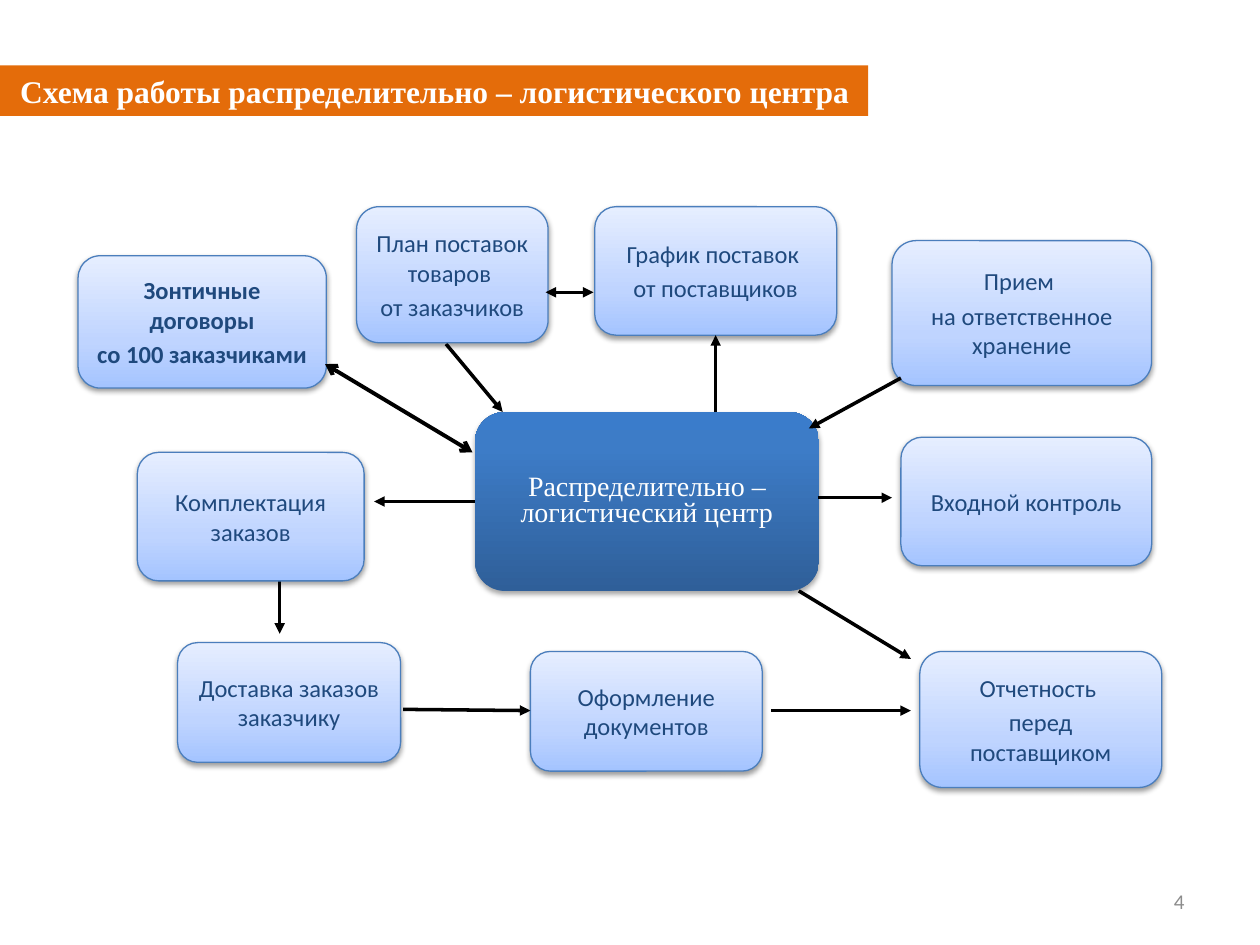
from lxml import etree
from pptx import Presentation, util as u
from pptx.dml.color import RGBColor
from pptx.enum import shapes, text
from pptx.oxml import ns

COLORS = {"title": "E46C0A", "white": "FFFFFF", "ink": "1F497D", "edge": "4B7EBC",
          "arrow": "000000", "number": "8C8C8C"}
PALE = [(0, "A4C4FF"), (35, "BFD4FF"), (100, "E6EEFF")]
DEEP = [(0, "2F5F99"), (80, "3D7CC7"), (100, "3A7CCB")]

deck = Presentation()
deck.slide_width, deck.slide_height = u.Inches(10), u.Inches(7.5)
page = deck.slides.add_slide(deck.slide_layouts[6])
COLUMN, ROW = deck.slide_width / 100, deck.slide_height / 75


def place(left, top, width, height):
    return [round(n * unit) for n, unit in zip((left, top, width, height), (COLUMN, ROW) * 2)]


def write(box, lines, size, color, font="Calibri", bold=False, align=text.PP_ALIGN.CENTER,
          before=0, spacing=1):
    frame = box.text_frame
    frame.word_wrap = True
    frame.vertical_anchor = text.MSO_ANCHOR.MIDDLE
    for i, line in enumerate(lines):
        para = frame.paragraphs[0] if i == 0 else frame.add_paragraph()
        para.alignment, para.line_spacing = align, spacing
        para.space_before = u.Pt(before)
        span = para.add_run()
        span.text = line
        span.font.name, span.font.size, span.font.bold = font, u.Pt(size), bold
        span.font.color.rgb = RGBColor.from_string(COLORS[color])


CENTER = ["Распределительно – логистический центр"]
UMBRELLA = ["Зонтичные договоры", "со 100 заказчиками"]
steps = [
    ("arrow", (22.2, 44.9), (22.2, 50.3), "end"),
    ("arrow", (35.4, 27.3), (39.9, 32.7), "end"),
    ("box", (37.7, 32.7, 27.3, 14.2), CENTER),
    ("box", (28.3, 16.4, 15.2, 10.8), ["План поставок товаров ", "от заказчиков"]),
    ("box", (47.2, 16.4, 19.2, 10.2), ["График поставок ", "от поставщиков"]),
    ("box", (70.8, 19.1, 20.6, 11.5), ["Прием ", "на ответственное хранение"]),
    ("box", (71.5, 34.7, 19.9, 10.2), ["Входной контроль"]),
    ("box", (10.9, 35.9, 18, 10.2), ["Комплектация заказов"]),
    ("box", (14.1, 51, 17.7, 9.5), ["Доставка заказов заказчику"]),
    ("box", (42.1, 51.7, 18.4, 9.5), ["Оформление документов"]),
    ("box", (73, 51.7, 19.2, 10.8), ["Отчетность ", "перед поставщиком"]),
    ("arrow", (56.8, 32.7), (56.8, 26.6), "end"),
    ("arrow", (71.5, 30), (64.2, 34), "end"),
    ("arrow", (64.9, 39.5), (70.8, 39.5), "end"),
    ("arrow", (37.7, 39.8), (29.7, 39.8), "end"),
    ("arrow", (63.4, 46.9), (72.3, 52.3), "end"),
    ("arrow", (61.2, 56.4), (72.3, 56.4), "end"),
    ("arrow", (47.1, 23.2), (43.3, 23.2), "both"),
    ("box", (6.2, 20.3, 19.7, 10.5), UMBRELLA),
    ("arrow", (25.8, 28.9), (37.5, 35.9), "open"),
    ("arrow", (32, 56.3), (42.1, 56.4), "end"),
]

for kind, first, second, *ends in steps:
    if kind == "arrow":
        arrow = page.shapes.add_connector(shapes.MSO_CONNECTOR.STRAIGHT,
                                          *place(*first, *second))
        arrow.line.color.rgb = RGBColor.from_string(COLORS["arrow"])
        arrow.line.width = u.Pt(2.25 if ends == ["open"] else 2)
        head = "arrow" if ends == ["open"] else "triangle"
        for tag in ["a:tailEnd"] if ends == ["end"] else ["a:headEnd", "a:tailEnd"]:
            etree.SubElement(arrow.line._get_or_add_ln(), ns.qn(tag), type=head)
        etree.SubElement(arrow._element.spPr, ns.qn("a:effectLst"))
        continue

    central = second == CENTER
    box = page.shapes.add_shape(shapes.MSO_SHAPE.ROUNDED_RECTANGLE, *place(*first))
    box.fill.gradient()
    gradient = box._element.spPr.find(ns.qn("a:gradFill"))
    stops = gradient.find(ns.qn("a:gsLst"))
    for stop in list(stops):
        stops.remove(stop)
    for position, color in DEEP if central else PALE:
        stop = etree.SubElement(stops, ns.qn("a:gs"), pos=str(position * 1000))
        etree.SubElement(stop, ns.qn("a:srgbClr"), val=color)
    gradient.find(ns.qn("a:lin")).set("ang", "16200000")

    if central:
        box.line.fill.background()
    else:
        box.line.color.rgb = RGBColor.from_string(COLORS["edge"])
        box.line.width = u.Pt(0.75)
    box.shadow.inherit = False
    effects = box._element.spPr.find(ns.qn("a:effectLst"))
    shadow = etree.SubElement(effects, ns.qn("a:outerShdw"), blurRad="40000",
                              dist="23000" if central else "20000", dir="5400000",
                              rotWithShape="0")
    tint = etree.SubElement(shadow, ns.qn("a:srgbClr"), val=COLORS["arrow"])
    etree.SubElement(tint, ns.qn("a:alpha"), val="35000" if central else "38000")

    if central:
        write(box, second, 16, "white", "Times New Roman", spacing=0.8)
    else:
        write(box, second, 14, "ink", bold=second == UMBRELLA, before=2.8)

title = page.shapes.add_shape(shapes.MSO_SHAPE.RECTANGLE, *place(0, 5.2, 68.9, 4))
title.fill.solid()
title.fill.fore_color.rgb = RGBColor.from_string(COLORS["title"])
title.line.fill.background()
title.shadow.inherit = False
title.text_frame.margin_left, title.text_frame.margin_right = round(1.6 * COLUMN), 0
write(title, ["Схема работы распределительно – логистического центра"], 18, "white",
      "Times New Roman", True, text.PP_ALIGN.LEFT)

number = page.shapes.add_textbox(*place(71.7, 69.5, 23.3, 4))
write(number, ["4"], 12, "number", align=text.PP_ALIGN.RIGHT)

deck.save("out.pptx")
